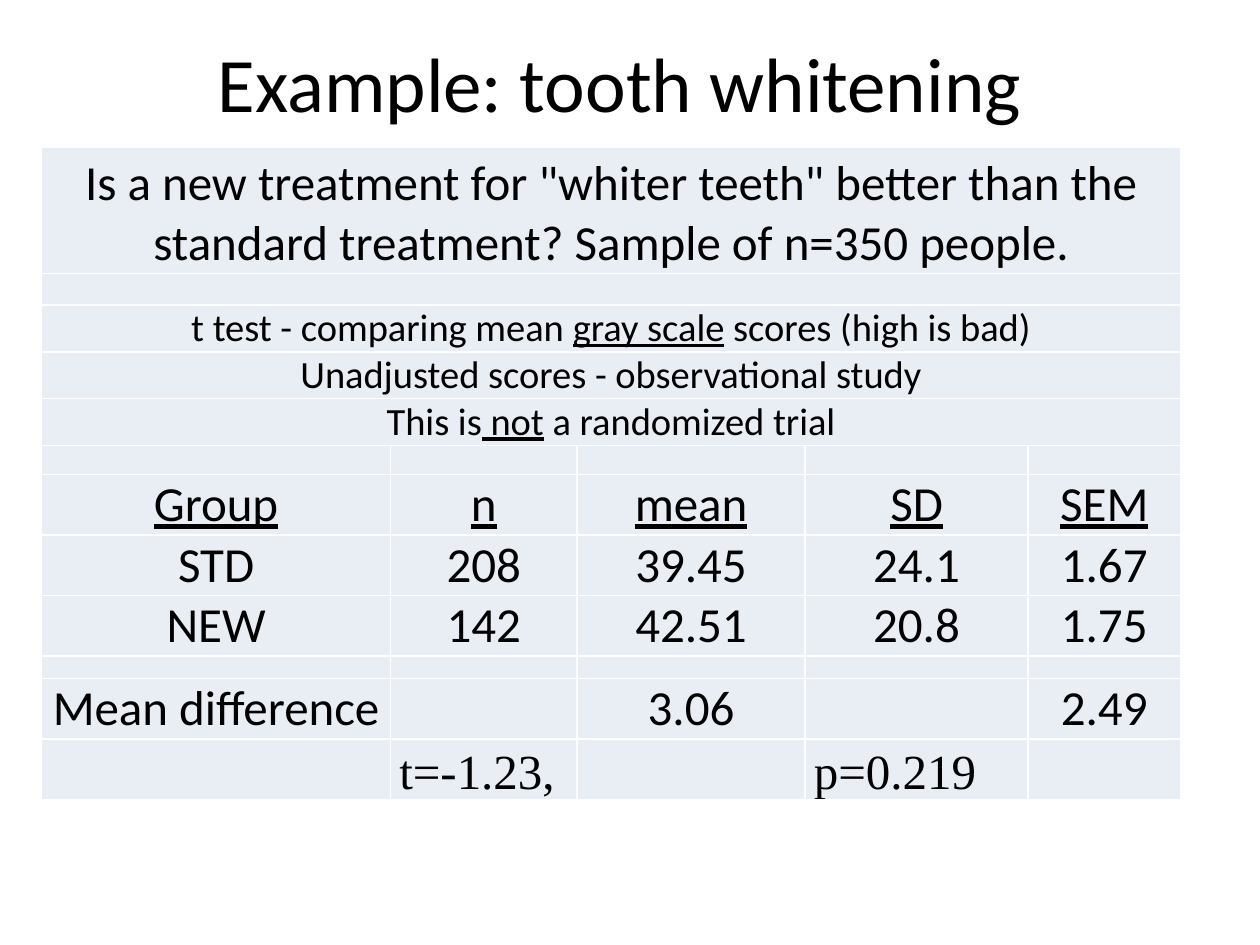
from lxml import etree
from pptx import Presentation
from pptx import util as u
from pptx.dml.color import RGBColor
from pptx.enum import text
from pptx.oxml import ns

BLACK = RGBColor(0x00, 0x00, 0x00)
WHITE = RGBColor(0xFF, 0xFF, 0xFF)
PALE_BLUE = RGBColor(0xE9, 0xED, 0xF4)
BODY_FONT = "Calibri"
RESULT_FONT = "Times New Roman"
CENTER = text.PP_ALIGN.CENTER
LEFT = text.PP_ALIGN.LEFT

COLUMN_WIDTHS = [2.77, 1.48, 1.81, 1.77, 1.21]
# Each banner spans the table: height, size, paragraphs of (text, underlined) runs.
BANNERS = [
    (1, 28, [[('Is a new treatment for "whiter teeth" better than the', False)],
             [("standard treatment? Sample of n=350 people.", False)]]),
    (0.25, 12, []),
    (0.37, 22, [[("t test - comparing mean ", False), ("gray scale", True),
                 (" scores (high is bad)", False)]]),
    (0.37, 22, [[("Unadjusted scores - observational study", False)]]),
    (0.37, 22, [[("This is", False), (" not", True), (" a randomized trial", False)]]),
]
SPACER = [""] * len(COLUMN_WIDTHS)
HEADINGS = ["Group", "n", "mean", "SD", "SEM"]
RESULTS = ["", "t=-1.23,", "", "p=0.219", ""]
DATA_ROWS = [
    (0.23, SPACER),
    (0.48, HEADINGS),
    (0.48, ["STD", "208", "39.45", "24.1", "1.67"]),
    (0.48, ["NEW", "142", "42.51", "20.8", "1.75"]),
    (0.18, SPACER),
    (0.48, ["Mean difference", "", "3.06", "", "2.49"]),
    (0.48, RESULTS),
]


class SlideBuilder:
    def __init__(self, slide):
        self.slide = slide

    def span(self, para, words, size, font=BODY_FONT, underlined=False):
        run = para.add_run()
        run.text = words
        run.font.name = font
        run.font.size = u.Pt(size)
        run.font.color.rgb = BLACK
        if underlined:
            run.font.underline = True

    def title(self, words, left, top, width, height):
        box = self.slide.shapes.title
        box.left, box.top = u.Inches(left), u.Inches(top)
        box.width, box.height = u.Inches(width), u.Inches(height)
        box.text_frame.vertical_anchor = text.MSO_ANCHOR.MIDDLE
        para = box.text_frame.paragraphs[0]
        para.alignment = CENTER
        self.span(para, words, 44)

    def table(self, left, top, widths, heights):
        table = self.slide.shapes.add_table(
            len(heights), len(widths), u.Inches(left), u.Inches(top),
            u.Inches(sum(widths)), u.Inches(sum(heights))).table
        table.first_row = table.horz_banding = False
        for column, width in zip(table.columns, widths):
            column.width = u.Inches(width)
        for row, height in zip(table.rows, heights):
            row.height = u.Inches(height)
            for cell in row.cells:
                self.style_cell(cell)
        return table

    def style_cell(self, cell):
        cell.margin_left = cell.margin_right = u.Inches(0.07)
        cell.margin_top = cell.margin_bottom = 0
        cell.vertical_anchor = text.MSO_ANCHOR.BOTTOM
        properties = cell._tc.get_or_add_tcPr()
        for side in ("lnL", "lnR", "lnT", "lnB"):
            line = etree.SubElement(properties, ns.qn(f"a:{side}"), w=str(u.Pt(1)))
            fill = etree.SubElement(line, ns.qn("a:solidFill"))
            etree.SubElement(fill, ns.qn("a:srgbClr"), val=str(WHITE))
        cell.fill.solid()
        cell.fill.fore_color.rgb = PALE_BLUE

    def cell_text(self, cell, paragraphs, size, font=BODY_FONT, alignment=CENTER):
        frame = cell.text_frame
        for index, runs in enumerate(paragraphs):
            para = frame.add_paragraph() if index else frame.paragraphs[0]
            para.alignment = alignment
            for words, underlined in runs:
                self.span(para, words, size, font, underlined)

    def empty_cell(self, cell, size):
        """Keep the blank line small enough not to stretch its row."""
        para = cell.text_frame.paragraphs[0]
        etree.SubElement(para._p, ns.qn("a:endParaRPr"), sz=str(size * 100))


def main():
    deck = Presentation()
    deck.slide_width, deck.slide_height = u.Inches(10), u.Inches(7.5)
    builder = SlideBuilder(deck.slides.add_slide(deck.slide_layouts[5]))
    builder.title("Example: tooth whitening", 0.42, 0.17, 9, 0.95)

    heights = [row[0] for row in BANNERS + DATA_ROWS]
    table = builder.table(0.33, 1.17, COLUMN_WIDTHS, heights)
    last_column = len(COLUMN_WIDTHS) - 1
    for index, (_, size, paragraphs) in enumerate(BANNERS):
        cell = table.cell(index, 0)
        cell.merge(table.cell(index, last_column))
        for column in range(last_column + 1):
            if column or not paragraphs:
                builder.empty_cell(table.cell(index, column), 10)
        builder.cell_text(cell, paragraphs, size)

    for index, (_, values) in enumerate(DATA_ROWS, start=len(BANNERS)):
        is_result = values is RESULTS
        for column, value in enumerate(values):
            cell = table.cell(index, column)
            if value:
                builder.cell_text(cell, [[(value, values is HEADINGS)]], 28,
                                  RESULT_FONT if is_result else BODY_FONT,
                                  LEFT if is_result else CENTER)
            else:
                builder.empty_cell(cell, 10)
    deck.save("out.pptx")


if __name__ == "__main__":
    main()
